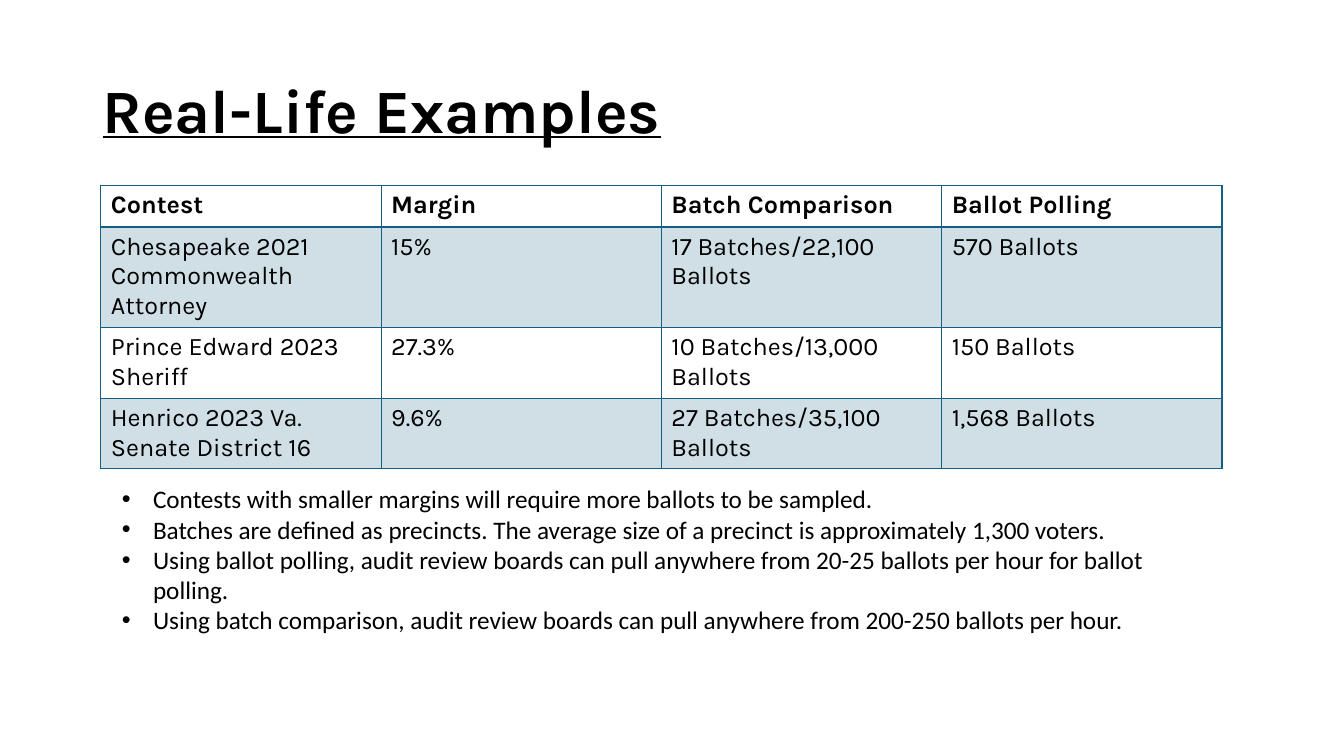
from lxml import etree
from pptx import Presentation
from pptx.dml.color import RGBColor
from pptx.enum.text import MSO_ANCHOR
from pptx.oxml.ns import qn
from pptx.util import Inches, Pt

MIDDLE = MSO_ANCHOR.MIDDLE
COLORS = {"text": "000000", "accent": "156082"}
HEADING_FONT, BODY_FONT = "Karla", "Calibri"
BAND_OPACITY = 20  # percent


def add_run(paragraph, text, font_name, size, bold=False):
    run = paragraph.add_run()
    run.text = text
    run.font.name = font_name
    run.font.size = Pt(size)
    run.font.bold = bold
    run.font.color.rgb = RGBColor.from_string(COLORS["text"])
    return run


def add_border(cell, side, width):
    line = etree.SubElement(cell._tc.get_or_add_tcPr(), qn(f"a:ln{side}"), w=str(Pt(width)))
    fill = etree.SubElement(line, qn("a:solidFill"))
    etree.SubElement(fill, qn("a:srgbClr"), val=COLORS["accent"])


presentation = Presentation()
presentation.slide_width = Inches(13.33)
presentation.slide_height = Inches(7.5)
slide = presentation.slides.add_slide(presentation.slide_layouts[6])

# Title
title = slide.shapes.add_textbox(Inches(0.92), Inches(0.4), Inches(11.5), Inches(1.45))
title.text_frame.word_wrap = True
title.text_frame.vertical_anchor = MIDDLE
paragraph = title.text_frame.paragraphs[0]
paragraph.line_spacing = 0.9
add_run(paragraph, "Real-Life Examples", HEADING_FONT, 44, bold=True).font.underline = True

# Contest table
rows = [
    ["Contest", "Margin", "Batch Comparison", "Ballot Polling"],
    ["Chesapeake 2021 Commonwealth Attorney", "15%", "17 Batches/22,100 Ballots", "570 Ballots"],
    ["Prince Edward 2023 Sheriff", "27.3%", "10 Batches/13,000 Ballots", "150 Ballots"],
    ["Henrico 2023 Va. Senate District 16", "9.6%", "27 Batches/35,100 Ballots", "1,568 Ballots"],
]
row_heights = [0.41, 0.98, 0.69, 0.69]
table = slide.shapes.add_table(
    len(rows), len(rows[0]), Inches(1), Inches(1.84), Inches(11.11), Inches(sum(row_heights))
).table
table.first_row = False
table.horz_banding = False
for column in table.columns:
    column.width = Inches(2.78)

for row_index, values in enumerate(rows):
    table.rows[row_index].height = Inches(row_heights[row_index])
    for column_index, value in enumerate(values):
        cell = table.cell(row_index, column_index)
        add_run(cell.text_frame.paragraphs[0], value, HEADING_FONT, 18, bold=row_index == 0)
        # The rule between header and body is heavier
        for side in ("L", "R", "T", "B"):
            heavy = (row_index, side) in ((0, "B"), (1, "T"))
            add_border(cell, side, 2 if heavy else 1)
        # Odd rows carry a translucent band
        if row_index % 2:
            cell.fill.solid()
            cell.fill.fore_color.rgb = RGBColor.from_string(COLORS["accent"])
            color = cell._tc.tcPr.find(qn("a:solidFill")).find(qn("a:srgbClr"))
            etree.SubElement(color, qn("a:alpha"), val=str(BAND_OPACITY * 1000))
        else:
            cell.fill.background()

# Notes below the table
bullets = [
    "Contests with smaller margins will require more ballots to be sampled.",
    "Batches are defined as precincts. The average size of a precinct is approximately 1,300 voters.",
    "Using ballot polling, audit review boards can pull anywhere from 20-25 ballots per hour for ballot polling.",
    "Using batch comparison, audit review boards can pull anywhere from 200-250 ballots per hour.",
]
notes = slide.shapes.add_textbox(Inches(1.11), Inches(4.75), Inches(10.97), Inches(1.92))
notes.text_frame.word_wrap = True
for index, text in enumerate(bullets):
    paragraph = notes.text_frame.add_paragraph() if index else notes.text_frame.paragraphs[0]
    properties = paragraph._p.get_or_add_pPr()
    properties.set("marL", str(Inches(0.31)))
    properties.set("indent", str(-Inches(0.31)))
    etree.SubElement(properties, qn("a:buFont"), typeface="Arial")
    etree.SubElement(properties, qn("a:buChar"), char="•")
    add_run(paragraph, text, BODY_FONT, 18)

presentation.save("out.pptx")
